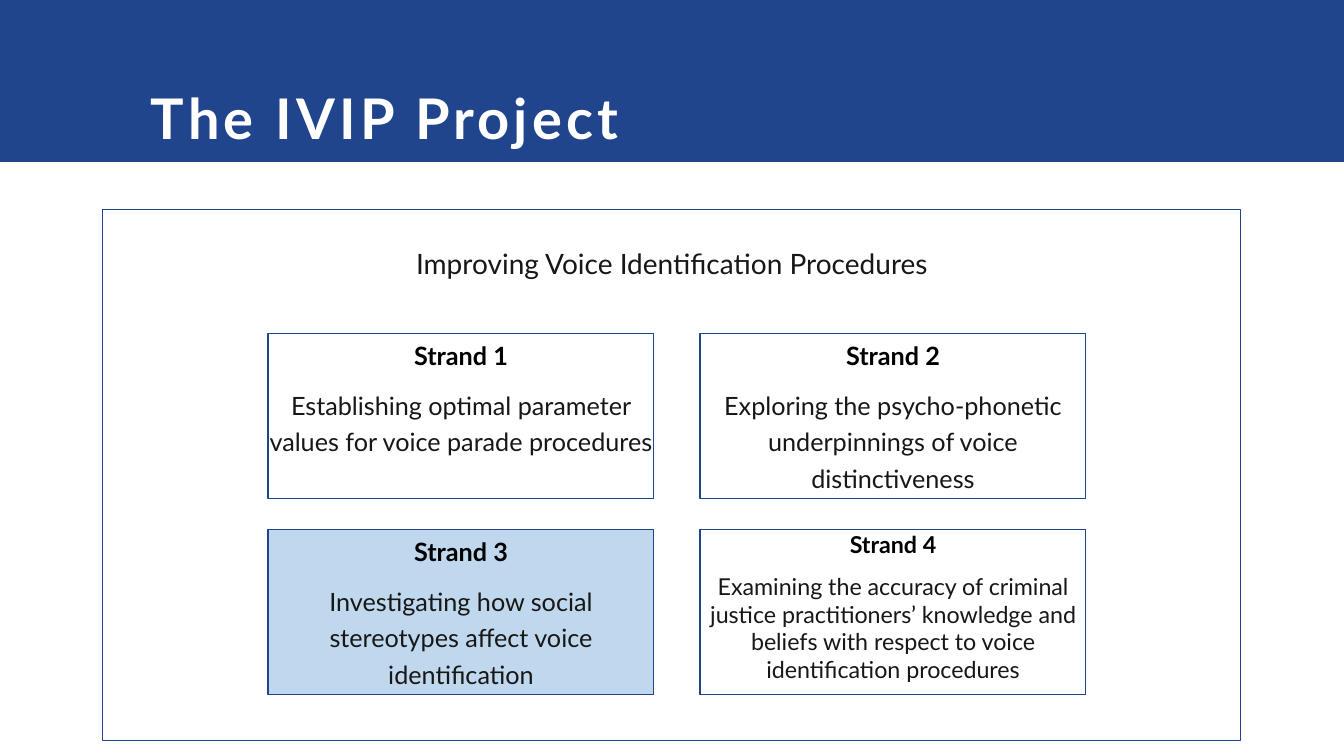
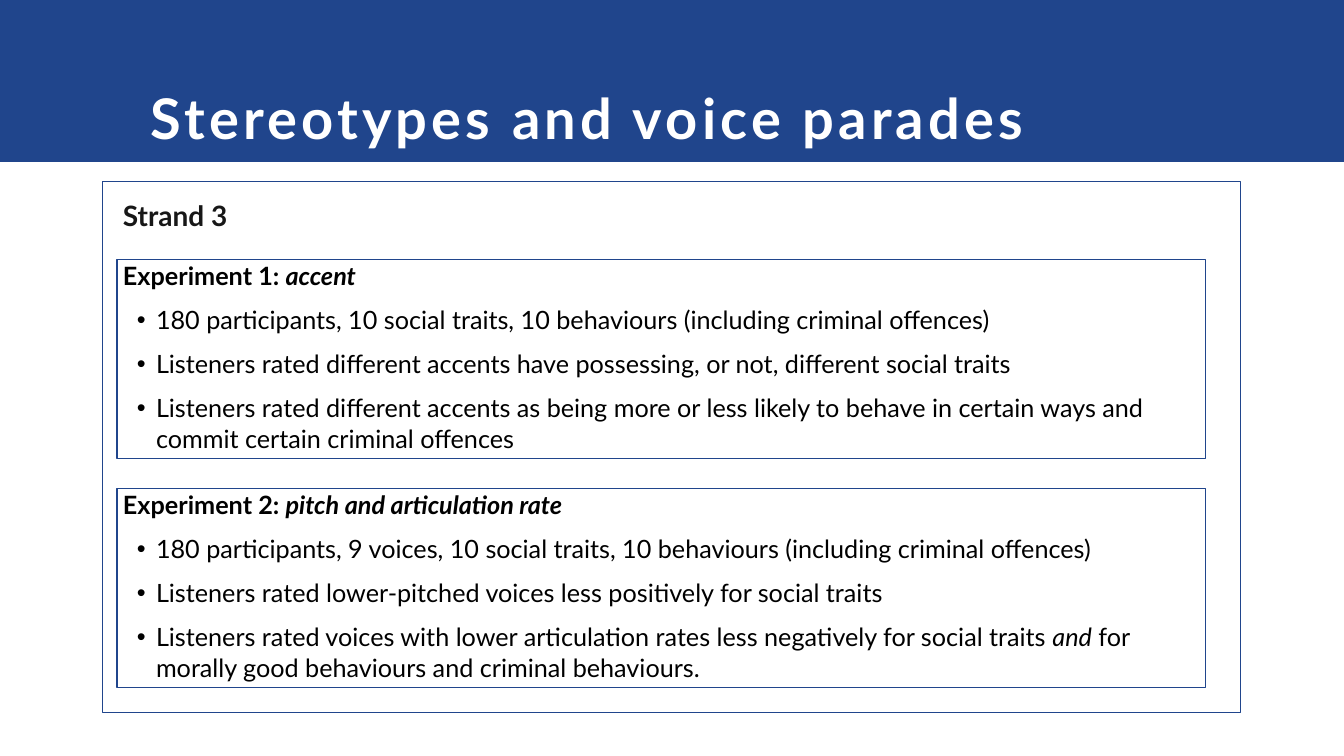
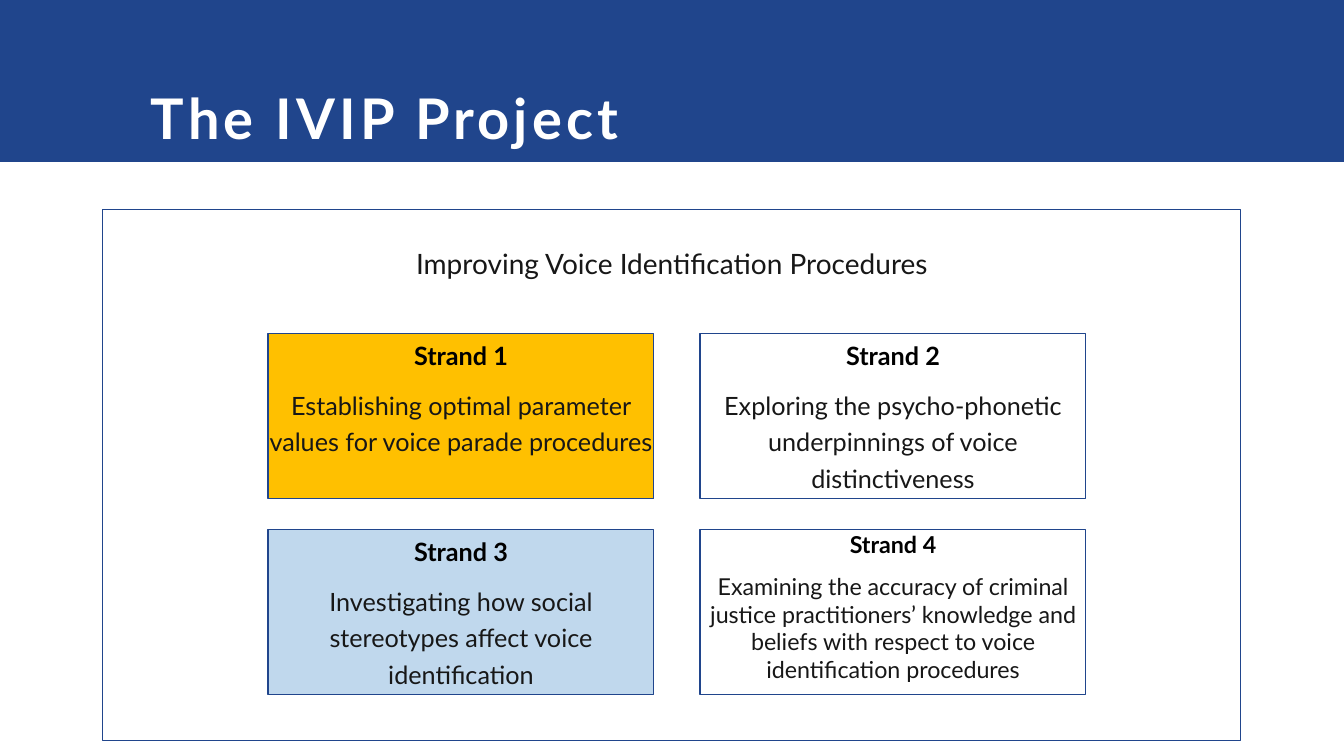
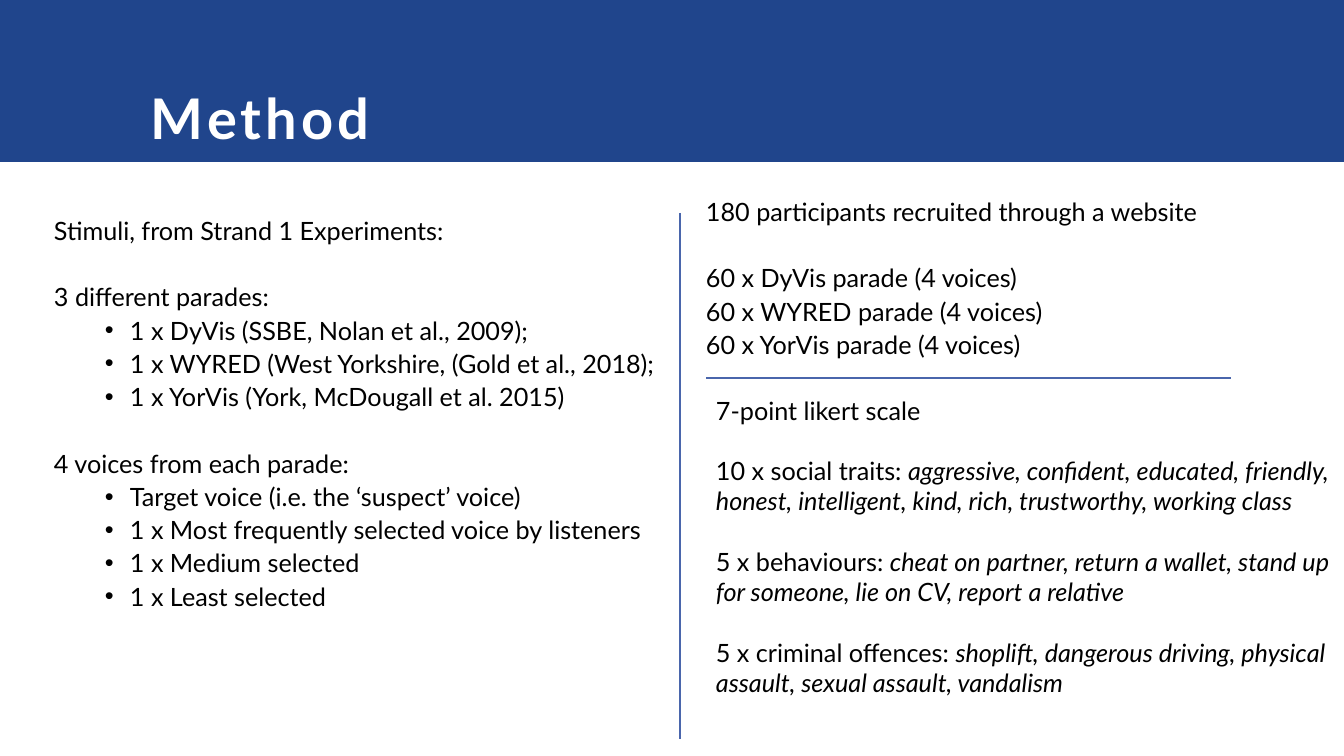
"""Build four slides on the voice identification project."""
from dataclasses import dataclass
from typing import Optional

import pptx
import pptx.dml.color
import pptx.enum.shapes
import pptx.enum.text
import pptx.oxml
import pptx.oxml.ns
import pptx.util
from lxml import etree

ALIGN = pptx.enum.text.PP_ALIGN
ANCHOR = pptx.enum.text.MSO_ANCHOR
KIND = pptx.enum.shapes.MSO_SHAPE
SCALE = 914400 / 100.8
FONT = "Lato"
NAVY, RULE, WHITE = "20458C", "4A66AC", "FFFFFF"
BLACK, INK, SKY, GOLD = "000000", "171717", "C0D8ED", "FFC000"


@dataclass(frozen=True)
class Para:
    text: str
    size: float = 18
    color: str = BLACK
    bold: bool = False
    align: ALIGN = ALIGN.LEFT
    lead: float = 1.0
    gap: float = 0
    left: int = 0
    hang: int = 0


@dataclass(frozen=True)
class Box:
    x: int
    y: int
    w: int
    h: int
    fill: Optional[str] = None
    line: Optional[str] = None
    top: int = 0
    side: int = 0


@dataclass(frozen=True)
class Strand:
    name: str
    text: str
    size: float = 18
    lead: float = 1.2


STRANDS = (
    Strand("Strand 1", "Establishing optimal parameter values for voice parade procedures"),
    Strand("Strand 2", "Exploring the psycho-phonetic underpinnings of voice distinctiveness"),
    Strand("Strand 3", "Investigating how social stereotypes affect voice identification"),
    Strand("Strand 4", "Examining the accuracy of criminal justice practitioners’ knowledge "
           "and beliefs with respect to voice identification procedures", 16.6, 1.0),
)
TESTS = (
    ("Experiment 1: *accent*",
     "180 participants, 10 social traits, 10 behaviours (including criminal offences)",
     "Listeners rated different accents have possessing, or not, different social traits",
     "Listeners rated different accents as being more or less likely to behave in certain "
     "ways and commit certain criminal offences"),
    ("Experiment 2: *pitch and articulation rate*",
     "180 participants, 9 voices, 10 social traits, 10 behaviours (including criminal offences)",
     "Listeners rated lower-pitched voices less positively for social traits",
     "Listeners rated voices with lower articulation rates less negatively for social traits "
     "*and* for morally good behaviours and criminal behaviours."),
)
STIMULI = (
    ("Stimuli, from Strand 1 Experiments:",),
    ("3 different parades:",
     "1 x DyVis (SSBE, Nolan et al., 2009);",
     "1 x WYRED (West Yorkshire, (Gold et al., 2018);",
     "1 x YorVis (York, McDougall et al. 2015)"),
    ("4 voices from each parade:",
     "Target voice (i.e. the ‘suspect’ voice)",
     "1 x Most frequently selected voice by listeners",
     "1 x Medium selected",
     "1 x Least selected"),
)
PEOPLE = (
    "180 participants recruited through a website",
    "60 x DyVis parade (4 voices)",
    "60 x WYRED parade (4 voices)",
    "60 x YorVis parade (4 voices)",
)
SCALES = (
    "7-point likert scale",
    "10 x social traits: *aggressive, confident, educated, friendly, honest, intelligent, "
    "kind, rich, trustworthy, working class*",
    "5 x behaviours: *cheat on partner, return a wallet, stand up for someone, lie on CV, "
    "report a relative*",
    "5 x criminal offences: *shoplift, dangerous driving, physical assault, sexual assault, "
    "vandalism*",
)


def px(count: int) -> pptx.util.Emu:
    return pptx.util.Emu(round(count * SCALE))


def tint(code: str) -> pptx.dml.color.RGBColor:
    return pptx.dml.color.RGBColor.from_string(code)


def place(shape, box: Box) -> None:
    shape.left, shape.top = px(box.x), px(box.y)
    shape.width, shape.height = px(box.w), px(box.h)


def style(para, data: Para) -> None:
    props = para._p.get_or_add_pPr()
    props.set("marL", str(px(data.left)))
    props.set("indent", str(px(-data.hang)))
    para.alignment = data.align
    para.line_spacing = data.lead
    para.space_before = pptx.util.Pt(data.gap)
    para.space_after = pptx.util.Pt(0)
    if data.hang:
        face = etree.SubElement(props, pptx.oxml.ns.qn("a:buFont"))
        face.set("typeface", "Arial")
        etree.SubElement(props, pptx.oxml.ns.qn("a:buChar")).set("char", "•")
    font = para.font
    font.name, font.size, font.bold = FONT, pptx.util.Pt(data.size), data.bold
    font.color.rgb = tint(data.color)
    for spot, part in enumerate(data.text.split("*")):
        if part:
            run = para.add_run()
            run.text = part
            if spot % 2:
                run.font.italic = True


def write(shape, paras: list[Para], box: Box, anchor: ANCHOR = ANCHOR.TOP) -> None:
    frame = shape.text_frame
    frame.word_wrap = True
    frame.auto_size = pptx.enum.text.MSO_AUTO_SIZE.NONE
    frame.vertical_anchor = anchor
    frame.margin_left, frame.margin_top = px(box.side), px(box.top)
    frame.margin_right = frame.margin_bottom = 0
    for spot, data in enumerate(paras):
        style(frame.add_paragraph() if spot else frame.paragraphs[0], data)


def panel(slide, box: Box, paras: list[Para]):
    shape = slide.shapes.add_shape(KIND.RECTANGLE, 0, 0, 0, 0)
    place(shape, box)
    shape.shadow.inherit = False
    if box.fill:
        shape.fill.solid()
        shape.fill.fore_color.rgb = tint(box.fill)
    else:
        shape.fill.background()
    if box.line:
        shape.line.color.rgb = tint(box.line)
        shape.line.width = pptx.util.Pt(0.75)
    else:
        shape.line.fill.background()
    write(shape, paras, box)
    return shape


def note(slide, box: Box, paras: list[Para]) -> None:
    shape = slide.shapes.add_textbox(0, 0, 0, 0)
    place(shape, box)
    write(shape, paras, box)


def rule(slide, x: int, y: int, end: int, foot: int) -> None:
    line = slide.shapes.add_connector(
        pptx.enum.shapes.MSO_CONNECTOR.STRAIGHT, px(x), px(y), px(end), px(foot))
    line.line.color.rgb = tint(RULE)
    line.line.width = pptx.util.Pt(1.5)
    etree.SubElement(line._element.spPr, pptx.oxml.ns.qn("a:effectLst"))


def start(deck, text: str):
    slide = deck.slides.add_slide(deck.slide_layouts[5])
    title, box = slide.shapes.title, Box(151, 15, 1129, 136)
    place(title, box)
    write(title, [Para(text, 40, WHITE, True)], box, ANCHOR.BOTTOM)
    props = title.text_frame.paragraphs[0]._p.get_or_add_pPr()
    props.find(pptx.oxml.ns.qn("a:defRPr")).set("spc", "300")
    return slide


def brand(deck, slide) -> None:
    layout = deck.slide_layouts[5]
    for holder in list(layout.placeholders):
        if holder.placeholder_format.idx:
            layout.shapes.element.remove(holder.element)
    band = panel(slide, Box(0, 0, 1344, 162, NAVY), [])
    layout.shapes.element.insert(2, band.element)


def project(deck, fills: dict[int, str]):
    slide = start(deck, "The IVIP Project")
    panel(slide, Box(103, 210, 1138, 531, line=NAVY, top=30),
          [Para("Improving Voice Identification Procedures", 20, INK,
                align=ALIGN.CENTER, lead=1.2)])
    for spot, item in enumerate(STRANDS):
        row, col = divmod(spot, 2)
        box = Box(268 + 432 * col, 334 + 196 * row, 386, 165, fills.get(spot), NAVY)
        panel(slide, box, [
            Para(item.name, item.size, BLACK, True, ALIGN.CENTER, item.lead),
            Para(item.text, item.size, INK, False, ALIGN.CENTER, item.lead, 10)])
    return slide


def trials(deck) -> None:
    slide = start(deck, "Stereotypes and voice parades")
    panel(slide, Box(103, 182, 1138, 531, line=NAVY, top=17, side=20),
          [Para("Strand 3", 20, INK, True)])
    for row, (head, *facts) in enumerate(TESTS):
        paras = [Para(head, bold=True, left=6)]
        paras += [Para(fact, gap=10, left=39, hang=19) for fact in facts]
        panel(slide, Box(117, 260 + 229 * row, 1089, 199, line=NAVY), paras)


def method(deck) -> None:
    slide = start(deck, "Method")
    paras = []
    for head, *facts in STIMULI:
        paras.append(Para(head, lead=1.1, gap=23.8 if paras else 0))
        paras += [Para(fact, lead=1.1, left=76, hang=25) for fact in facts]
    note(slide, Box(54, 212, 681, 480), paras)
    rule(slide, 680, 213, 680, 739)
    note(slide, Box(706, 193, 545, 202),
         [Para(text, lead=1.1, gap=23.8 if spot == 1 else 0)
          for spot, text in enumerate(PEOPLE)])
    rule(slide, 1231, 378, 706, 378)
    note(slide, Box(716, 395, 614, 361),
         [Para(text, gap=21.6 if spot else 0) for spot, text in enumerate(SCALES)])


def main() -> None:
    deck = pptx.Presentation()
    deck.slide_width, deck.slide_height = px(1344), px(756)
    first = project(deck, {2: SKY})
    brand(deck, first)
    trials(deck)
    project(deck, {0: GOLD, 2: SKY})
    method(deck)
    deck.save("out.pptx")


if __name__ == "__main__":
    main()
